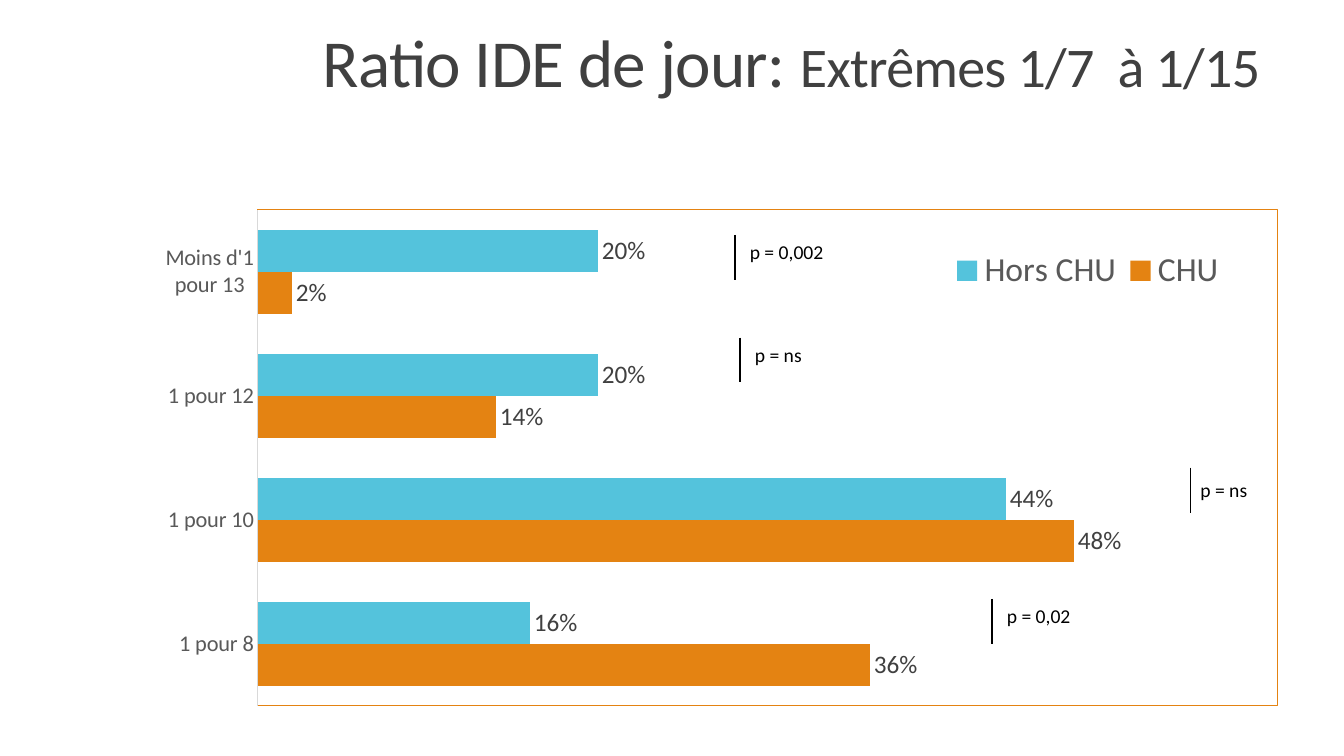
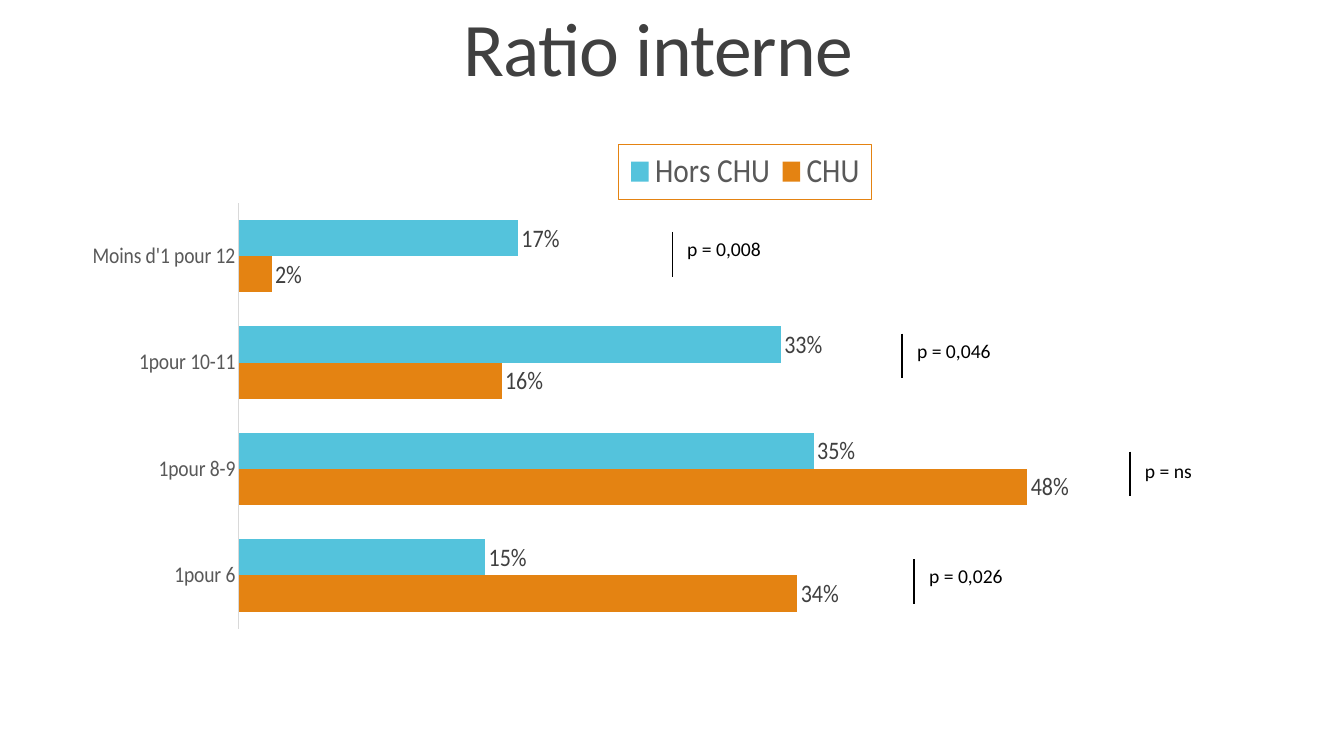
from dataclasses import dataclass

from lxml import etree
from pptx import Presentation
from pptx.chart.data import CategoryChartData
from pptx.dml.color import RGBColor
from pptx.enum.chart import XL_CHART_TYPE as ChartType
from pptx.enum.chart import XL_LABEL_POSITION as LabelPosition
from pptx.enum.chart import XL_LEGEND_POSITION as LegendPosition
from pptx.enum.chart import XL_TICK_MARK as TickMark
from pptx.enum.shapes import MSO_CONNECTOR as Connector
from pptx.oxml import parse_xml
from pptx.oxml.ns import nsdecls, qn
from pptx.util import Pt


@dataclass(frozen=True)
class Theme:
    font: str = "Calibri"
    dark: str = "404040"
    grey: str = "595959"
    rule: str = "D9D9D9"
    black: str = "000000"
    orange: str = "E48312"
    blue: str = "54C3DC"
    axis_size: int = 16
    label_size: int = 18
    legend_size: int = 24
    marker_size: int = 14


THEME = Theme()
SERIES_COLORS = {"CHU": THEME.orange, "Hors CHU": THEME.blue}
MARKER_HEIGHT = 32
MARKER_GAP = 3.6

# Content: boxes are left, top, width, height in points;
# layouts are the same four as fractions of the chart.
# Markers are the bar's x and y, the text, and the text's offset from the bar.
SLIDES = [
    {
        "title": [("Ratio IDE de jour: ", 48), ("Extrêmes 1/7  à 1/15", 40)],
        "title_at": (230.4, 14.3),
        "chart_box": (102.2, 97.9, 828, 415.4),
        "plot": (0.099, 0.125, 0.88, 0.853),
        "legend": (0.69, 0.18, 0.25, 0.1),
        "framed": "plot",
        "categories": ["1 pour 8", "1 pour 10", "1 pour 12", "Moins d'1 pour 13"],
        "series": {"CHU": (0.36, 0.48, 0.14, 0.02),
                   "Hors CHU": (0.16, 0.44, 0.2, 0.2)},
        "markers": [
            (708.5, 427.7, "p = 0,02", MARKER_GAP, 0),
            (528.5, 241.2, "p = ns", MARKER_GAP, 0),
            (850.3, 334.1, "p = ns", 0, 3.6),
            (524.9, 167.8, "p = 0,002", MARKER_GAP, 0),
        ],
    },
    {
        "title": [("Ratio interne", 54)],
        "title_at": (331.2, 0.7),
        "chart_box": (66.2, 97.9, 828, 392.4),
        "plot": (0, 0.12, 0.973, 0.775),
        "legend": (0.375, 0.013, 0.25, 0.1),
        "framed": "legend",
        "categories": ["1pour 6", "1pour 8-9", "1pour 10-11", "Moins d'1 pour 12"],
        "series": {"CHU": (0.34, 0.48, 0.16, 0.02),
                   "Hors CHU": (0.15, 0.35, 0.33, 0.17)},
        "markers": [
            (480.2, 165.6, "p = 0,008", MARKER_GAP, 0),
            (644.4, 238.3, "p = 0,046", MARKER_GAP, 0),
            (653, 399.6, "p = 0,026", MARKER_GAP, 0),
            (807.1, 322.6, "p = ns", MARKER_GAP, 1.4),
        ],
    },
]


def set_font(font, size, color):
    font.name = THEME.font
    font.size = Pt(size)
    font.color.rgb = RGBColor.from_string(color)


def add_text_box(page, left, top, width, height, inset=(0, 0)):
    box = page.shapes.add_textbox(Pt(left), Pt(top), Pt(width), Pt(height))
    frame = box.text_frame
    frame.word_wrap = True
    frame.margin_left = frame.margin_right = Pt(inset[0])
    frame.margin_top = frame.margin_bottom = Pt(inset[1])
    return frame.paragraphs[0]


def add_title(page, parts, position):
    left, top = position
    para = add_text_box(page, left, top, 950 - left, 66)
    set_font(para.font, parts[0][1], THEME.dark)
    for text, size in parts:
        span = para.add_run()
        span.text = text
        set_font(span.font, size, THEME.dark)
        span.font._element.set("spc", "-50")


def add_marker(page, x, y, text, dx, dy):
    bar = page.shapes.add_connector(
        Connector.STRAIGHT, Pt(x), Pt(y), Pt(x), Pt(y + MARKER_HEIGHT))
    bar.line.color.rgb = RGBColor.from_string(THEME.black)
    bar.line.width = Pt(1)
    etree.SubElement(bar._element.spPr, qn("a:effectLst"))
    para = add_text_box(page, x + dx, y + dy, 100, 24.5, (7.2, 3.6))
    para.text = text
    set_font(para.font, THEME.marker_size, THEME.black)


# Chart parts that need XML
def set_layout(element, index, fractions, target=""):
    for old in element.findall(qn("c:layout")):
        element.remove(old)
    sizes = "".join(f'<c:{key} val="{value}"/>' for key, value in zip("xywh", fractions))
    element.insert(index, parse_xml(
        f'<c:layout {nsdecls("c")}><c:manualLayout>{target}'
        f'<c:xMode val="edge"/><c:yMode val="edge"/>{sizes}'
        "</c:manualLayout></c:layout>"))


def add_frame(element):
    frame = parse_xml(
        f'<c:spPr {nsdecls("c", "a")}><a:noFill/><a:ln w="{Pt(0.75)}"><a:solidFill>'
        f'<a:srgbClr val="{THEME.orange}"/></a:solidFill></a:ln></c:spPr>')
    text = element.find(qn("c:txPr"))
    if text is None:
        element.append(frame)
    else:
        text.addprevious(frame)


def add_ratio_chart(page, content):
    data = CategoryChartData(number_format="0%")
    data.categories = content["categories"]
    for name, values in content["series"].items():
        data.add_series(name, values)
    box = [Pt(length) for length in content["chart_box"]]
    chart = page.shapes.add_chart(ChartType.BAR_CLUSTERED, *box, data).chart
    set_font(chart.font, 10, THEME.black)
    chart.has_title = False

    # Bars and their values
    plot = chart.plots[0]
    plot.gap_width = 95
    plot.vary_by_categories = False
    for series in plot.series:
        series.format.fill.solid()
        series.format.fill.fore_color.rgb = RGBColor.from_string(SERIES_COLORS[series.name])
        labels = series.data_labels
        labels.show_value = True
        labels.number_format = "0%"
        labels.number_format_is_linked = False
        labels.position = LabelPosition.OUTSIDE_END
        set_font(labels.font, THEME.label_size, THEME.dark)

    # Axes
    categories, values = chart.category_axis, chart.value_axis
    categories.major_tick_mark = categories.minor_tick_mark = TickMark.NONE
    set_font(categories.tick_labels.font, THEME.axis_size, THEME.grey)
    categories.format.line.color.rgb = RGBColor.from_string(THEME.rule)
    categories.format.line.width = Pt(0.75)
    values.minimum_scale, values.maximum_scale = 0, 0.6
    values.has_major_gridlines = False
    values.visible = False

    # Legend, layout and frame
    chart.has_legend = True
    legend = chart.legend
    legend.position = LegendPosition.TOP
    legend.include_in_layout = False
    set_font(legend.font, THEME.legend_size, THEME.grey)
    areas = {"plot": chart._chartSpace.chart.plotArea, "legend": legend._element}
    set_layout(areas["plot"], 0, content["plot"], '<c:layoutTarget val="inner"/>')
    set_layout(areas["legend"], 1, content["legend"])
    add_frame(areas[content["framed"]])


def main():
    deck = Presentation()
    deck.slide_width, deck.slide_height = Pt(960), Pt(540)
    for content in SLIDES:
        page = deck.slides.add_slide(deck.slide_layouts[6])
        add_title(page, content["title"], content["title_at"])
        add_ratio_chart(page, content)
        for marker in content["markers"]:
            add_marker(page, *marker)
    deck.save("out.pptx")


if __name__ == "__main__":
    main()
